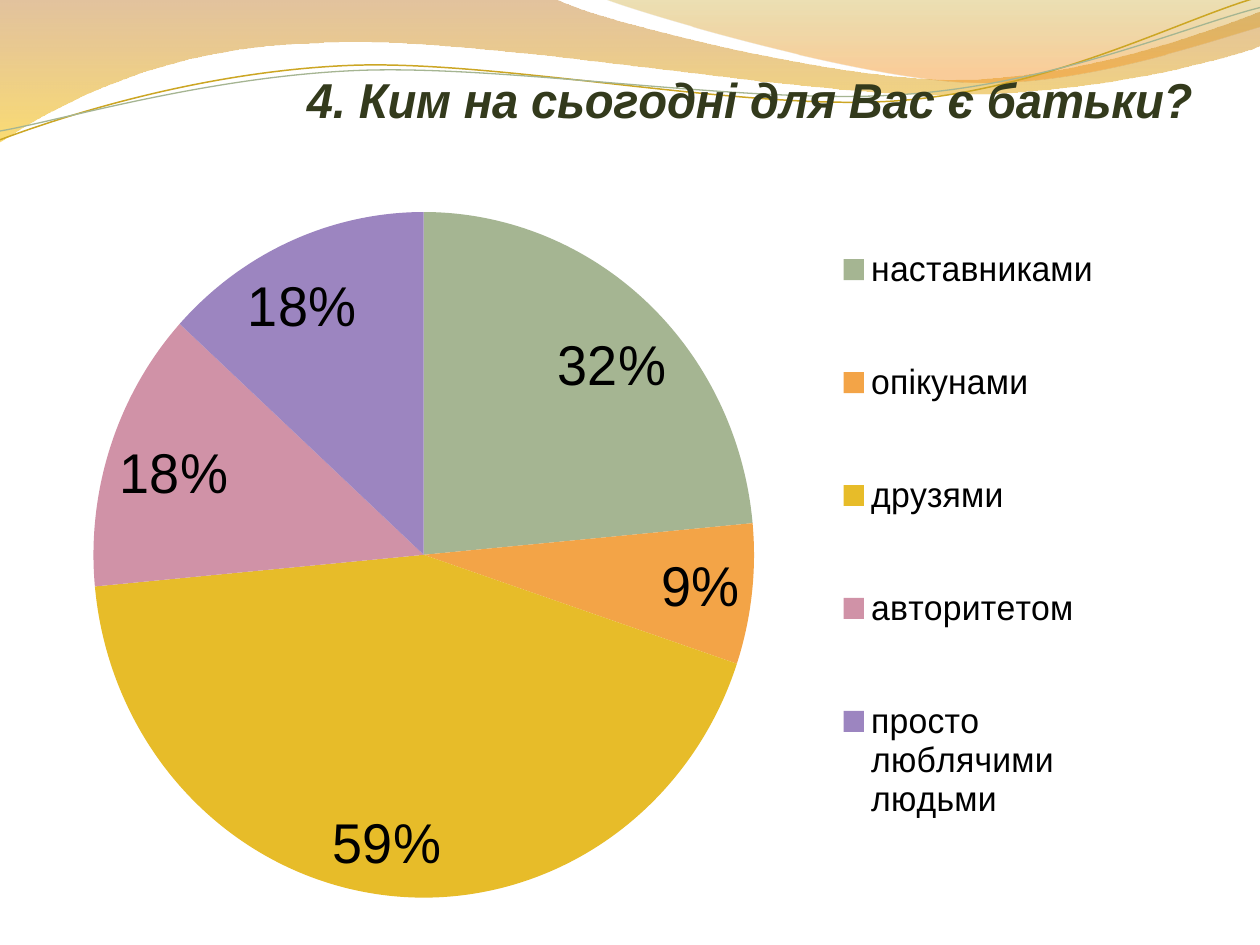
from lxml import etree
from pptx import Presentation
from pptx.chart.data import CategoryChartData
from pptx.dml.color import RGBColor
from pptx.enum.chart import XL_CHART_TYPE, XL_LABEL_POSITION, XL_LEGEND_POSITION
from pptx.oxml import parse_xml
from pptx.oxml.ns import nsdecls, qn
from pptx.util import Inches, Pt


def color(hex_value):
    return RGBColor.from_string(hex_value)


def draw_path(slide, path, close):
    """Freeform along (x, y) corners and 6-value cubic curves, in inches."""
    start, *rest = [(Inches(step[i]), Inches(step[i + 1]))
                    for step in path for i in range(0, len(step), 2)]
    builder = slide.shapes.build_freeform(*start)
    builder.add_line_segments(rest, close=close)
    shape = builder.convert_to_shape()
    shape.shadow.inherit = False
    # Join the three points of each curve into one cubic segment
    lines = iter(list(shape._element.iter(qn("a:lnTo"))))
    for step in path[1:]:
        first = next(lines)
        if len(step) == 6:
            first.tag = qn("a:cubicBezTo")
            for line in (next(lines), next(lines)):
                first.append(line[0])
                line.getparent().remove(line)
    return shape


prs = Presentation()
prs.slide_width, prs.slide_height = Inches(10), Inches(7.5)
# The heading belongs to the chart, so the slide needs no title placeholder
slide = prs.slides.add_slide(prs.slide_layouts[6])

# Translucent waves: path, then (position, colour, opacity in %) from top to bottom
waves = [
    ([(0, 0), (4.4, -0.01), (4.76, 0.17, 6.64, 0.63, 7.58, 0.63),
      (8.53, 0.63, 9.58, 0.26, 10, 0.09), (10.01, 0.36),
      (9.83, 0.44, 8.7, 0.76, 7.46, 0.75), (6.22, 0.75, 3.82, 0.28, 2.57, 0.34),
      (1.29, 0.36, 0.46, 0.83, -0.01, 1.13)],
     [(0, "C07A28", 45), (1, "F7BF00", 55)]),
    ([(4.79, -0.01), (5.09, 0.11, 6.82, 0.62, 7.69, 0.65),
      (8.56, 0.69, 9.61, 0.32, 10, 0.21), (10, 0)],
     [(0, "C09709", 30), (0.8, "F59320", 45)]),
]
for path, stops in waves:
    wave = draw_path(slide, path, True)
    wave.line.fill.background()
    wave.fill.gradient()
    wave.fill.gradient_angle = 270
    for stop, (position, hex_value, _) in zip(wave.fill.gradient_stops, stops):
        stop.position = position
        stop.color.rgb = color(hex_value)
    for rgb, (_, _, opacity) in zip(wave._element.spPr.iter(qn("a:srgbClr")), stops):
        etree.SubElement(rgb, qn("a:alpha")).set("val", str(opacity * 1000))

# Thin lines that follow the waves
strands = [
    ([(0, 1.11), (0.48, 0.93, 1.58, 0.57, 2.77, 0.52),
      (3.95, 0.47, 5.93, 0.89, 7.13, 0.8), (8.33, 0.71, 9.38, 0.15, 9.98, -0.02)],
     "CCA624", 0.85),
    ([(0, 1.04), (0.47, 0.96, 1.64, 0.61, 2.83, 0.56),
      (4.03, 0.51, 5.97, 0.84, 7.17, 0.75), (8.36, 0.67, 9.41, 0.21, 10, 0.06)],
     "A5B592", 0.75),
]
for path, hex_value, width in strands:
    strand = draw_path(slide, path, False)
    strand.fill.background()
    strand.line.color.rgb = color(hex_value)
    strand.line.width = Pt(width)

# Pie of the answers: share, colour, label shift in % of the chart frame
answers = [
    ("наставниками ", 0.32, "A5B592", (2.1, 3.2)),
    ("опікунами", 0.09, "F3A447", (-0.4, 2.9)),
    ("друзями", 0.59, "E7BC29", (-4.5, -1.5)),
    ("авторитетом", 0.18, "D092A7", (0.2, -0.7)),
    ("просто люблячими людьми", 0.18, "9C85C0", (-3.8, 3.1)),
]
data = CategoryChartData(number_format="0%")
data.categories = [answer[0] for answer in answers]
data.add_series("Series 1", [answer[1] for answer in answers])
pie = slide.shapes.add_chart(XL_CHART_TYPE.PIE, Inches(-0.31), Inches(0.39),
                             Inches(9.84), Inches(6.88), data).chart
plot = pie.plots[0]
plot.vary_by_categories = True
shares = plot.series[0]

# Heading and legend
pie.has_title = True
heading = pie.chart_title.text_frame
heading.text = "4. Ким на сьогодні для Вас є батьки?"
pie.chart_title.include_in_layout = False
pie.has_legend = True
pie.legend.position = XL_LEGEND_POSITION.RIGHT
pie.legend.include_in_layout = False

# Share labels
labels = shares.data_labels
for name, value in {"show_value": True, "show_percentage": False,
                    "number_format": "0%", "number_format_is_linked": False,
                    "position": XL_LABEL_POSITION.INSIDE_END}.items():
    setattr(labels, name, value)

fonts = [
    (pie.font, "000000", {"size": Pt(10)}),
    (heading.paragraphs[0].runs[0].font, "333A1C",
     {"size": Pt(28), "bold": True, "italic": True}),
    (pie.legend.font, "000000", {"size": Pt(20)}),
    (labels.font, "000000", {"size": Pt(32)}),
]

# Places of the chart parts, in % of the chart frame
edges = {"xMode": "edge", "yMode": "edge"}
places = [
    (pie.chart_title._element, {**edges, "x": 28.25, "y": 1.3}),
    (pie._chartSpace.chart.plotArea,
     {"layoutTarget": "inner", **edges, "x": 11.1, "y": 18.8, "w": 55.3, "h": 79.1}),
    (pie.legend._element, {**edges, "x": 72.75, "y": 14.7, "w": 24, "h": 82.7}),
]
for index, (_, _, hex_value, (shift_x, shift_y)) in enumerate(answers):
    point = shares.points[index]
    point.format.fill.solid()
    point.format.fill.fore_color.rgb = color(hex_value)
    point.data_label.position = XL_LABEL_POSITION.INSIDE_END
    fonts.append((point.data_label.font, "000000", {"size": Pt(32)}))
    places.append((labels._element.findall(qn("c:dLbl"))[index],
                   {"x": shift_x, "y": shift_y}))

for font, hex_value, formats in fonts:
    font.color.rgb = color(hex_value)
    for name, value in {"name": "Arial", **formats}.items():
        setattr(font, name, value)

for part, place in places:
    for old in part.findall(qn("c:layout")):
        part.remove(old)
    settings = "".join(
        f'<c:{key} val="{value if isinstance(value, str) else round(value / 100, 4)}"/>'
        for key, value in place.items())
    layout = parse_xml(f'<c:layout {nsdecls("c")}><c:manualLayout>{settings}'
                       f'</c:manualLayout></c:layout>')
    # The layout follows the index, text or position of its part
    leaders = [child for child in part
               if child.tag in (qn("c:idx"), qn("c:tx"), qn("c:legendPos"))]
    if leaders:
        leaders[0].addnext(layout)
    else:
        part.insert(0, layout)

prs.save("out.pptx")
